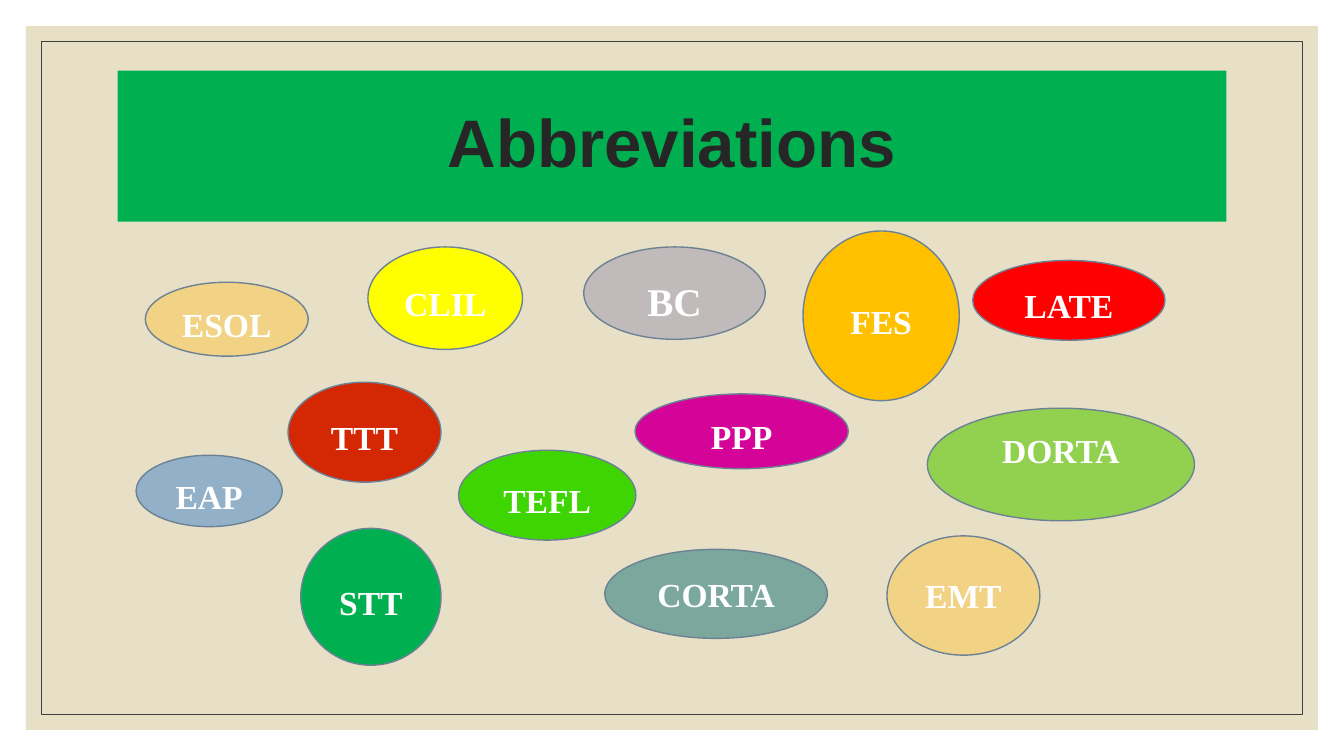
from dataclasses import dataclass

from pptx import Presentation
from pptx.dml.color import RGBColor
from pptx.enum.shapes import MSO_SHAPE
from pptx.enum.text import MSO_ANCHOR, PP_ALIGN
from pptx.util import Emu, Inches, Pt

RECTANGLE, OVAL = MSO_SHAPE.RECTANGLE, MSO_SHAPE.OVAL
MIDDLE, CENTER = MSO_ANCHOR.MIDDLE, PP_ALIGN.CENTER

COLUMNS, ROWS = 160, 90
CELL = Inches(1) // 12

WHITE = RGBColor(0xFF, 0xFF, 0xFF)
SAND = RGBColor(0xE7, 0xE0, 0xC7)
CHARCOAL = RGBColor(0x40, 0x40, 0x40)
INK = RGBColor(0x26, 0x26, 0x26)
GREEN = RGBColor(0x00, 0xB0, 0x50)
SLATE = RGBColor(0x6C, 0x82, 0x94)
SILVER = RGBColor(0xC0, 0xBA, 0xBA)
RED = RGBColor(0xFF, 0x00, 0x00)
LIME = RGBColor(0x3F, 0xD5, 0x03)
AMBER = RGBColor(0xFF, 0xC0, 0x00)
YELLOW = RGBColor(0xFF, 0xFF, 0x00)
TEAL = RGBColor(0x7B, 0xA7, 0x9D)
LEAF = RGBColor(0x92, 0xD0, 0x50)
BRICK = RGBColor(0xD4, 0x27, 0x04)
MAGENTA = RGBColor(0xD4, 0x04, 0x99)
BLUE = RGBColor(0x92, 0xB0, 0xC8)
GOLD = RGBColor(0xF2, 0xD3, 0x86)


@dataclass(frozen=True)
class Area:
    """A rectangle in grid columns and rows."""
    column: float
    row: float
    width: float
    height: float

    def lengths(self) -> list[Emu]:
        return [cells(n) for n in (self.column, self.row, self.width, self.height)]


@dataclass(frozen=True)
class Bubble:
    """An oval with a label; drop moves the label down from the middle, in points."""
    label: str
    area: Area
    fill: RGBColor
    size: int = 24
    drop: float = 3.5


BACKDROP = Area(3.1, 3.1, 153.8, 83.8)
FRAME = Area(4.9, 4.9, 150.2, 80.2)
BANNER = Area(14, 8.4, 132, 18)

BUBBLES = [
    Bubble("BC", Area(69.5, 29.4, 21.6, 11), SILVER, size=28, drop=5.75),
    Bubble("LATE", Area(115.8, 31, 22.9, 9.5), RED),
    Bubble("TEFL", Area(54.6, 53.6, 21.1, 10.7), LIME),
    Bubble("FES", Area(95.6, 27.5, 18.6, 20.2), AMBER),
    Bubble("CLIL", Area(43.8, 29.4, 18.4, 12.2), YELLOW),
    Bubble("CORTA", Area(72, 65.4, 26.5, 10.6), TEAL, drop=0),
    Bubble("DORTA", Area(110.4, 48.6, 31.8, 13.4), LEAF, drop=-10.5),
    Bubble("STT", Area(35.8, 62.9, 16.7, 16.3), GREEN),
    Bubble("TTT", Area(34.3, 45.5, 18.2, 11.9), BRICK),
    Bubble("PPP", Area(75.6, 46.9, 25.4, 8.9), MAGENTA),
    Bubble("EAP", Area(16.2, 54.2, 17.4, 8.5), BLUE),
    Bubble("EMT", Area(105.6, 63.8, 18.2, 14.2), GOLD, drop=0),
    Bubble("ESOL", Area(17.3, 33.6, 19.4, 8.8), GOLD),
]


def cells(count: float) -> Emu:
    return Emu(round(count * CELL))


def add_panel(page, area: Area, fill: RGBColor | None = None,
              line: RGBColor | None = None, weight: float = 1, kind=RECTANGLE):
    panel = page.shapes.add_shape(kind, *area.lengths())
    panel.shadow.inherit = False
    if fill is None:
        panel.fill.background()
    else:
        panel.fill.solid()
        panel.fill.fore_color.rgb = fill
    if line is None:
        panel.line.fill.background()
    else:
        panel.line.color.rgb = line
        panel.line.width = Pt(weight)
    return panel


def write_label(box, text: str, font_name: str, size: int, color: RGBColor):
    frame = box.text_frame
    frame.text = text
    frame.word_wrap = True
    frame.vertical_anchor = MIDDLE
    para = frame.paragraphs[0]
    para.alignment = CENTER
    para.font.name = font_name
    para.font.size = Pt(size)
    para.font.bold = True
    para.font.color.rgb = color
    return frame


def add_bubble(page, bubble: Bubble) -> None:
    oval = add_panel(page, bubble.area, bubble.fill, SLATE, kind=OVAL)
    frame = write_label(oval, bubble.label, "Times New Roman", bubble.size, WHITE)
    frame.margin_left = frame.margin_right = 0
    frame.margin_top = Pt(max(2 * bubble.drop, 0))
    frame.margin_bottom = Pt(max(-2 * bubble.drop, 0))


def add_banner(page) -> None:
    title = page.shapes.title
    title.left, title.top, title.width, title.height = BANNER.lengths()
    title.fill.solid()
    title.fill.fore_color.rgb = GREEN
    frame = write_label(title, "Abbreviations", "Arial", 48, INK)
    frame.paragraphs[0].line_spacing = 0.9
    page.shapes._spTree.append(title._element)  # in front of the backdrop


def main() -> None:
    deck = Presentation()
    deck.slide_width, deck.slide_height = cells(COLUMNS), cells(ROWS)
    page = deck.slides.add_slide(deck.slide_layouts.get_by_name("Title Only"))
    page.background.fill.solid()
    page.background.fill.fore_color.rgb = WHITE
    add_panel(page, BACKDROP, fill=SAND)
    add_panel(page, FRAME, line=CHARCOAL, weight=0.5)
    add_banner(page)
    for bubble in BUBBLES:
        add_bubble(page, bubble)
    deck.save("out.pptx")


if __name__ == "__main__":
    main()
